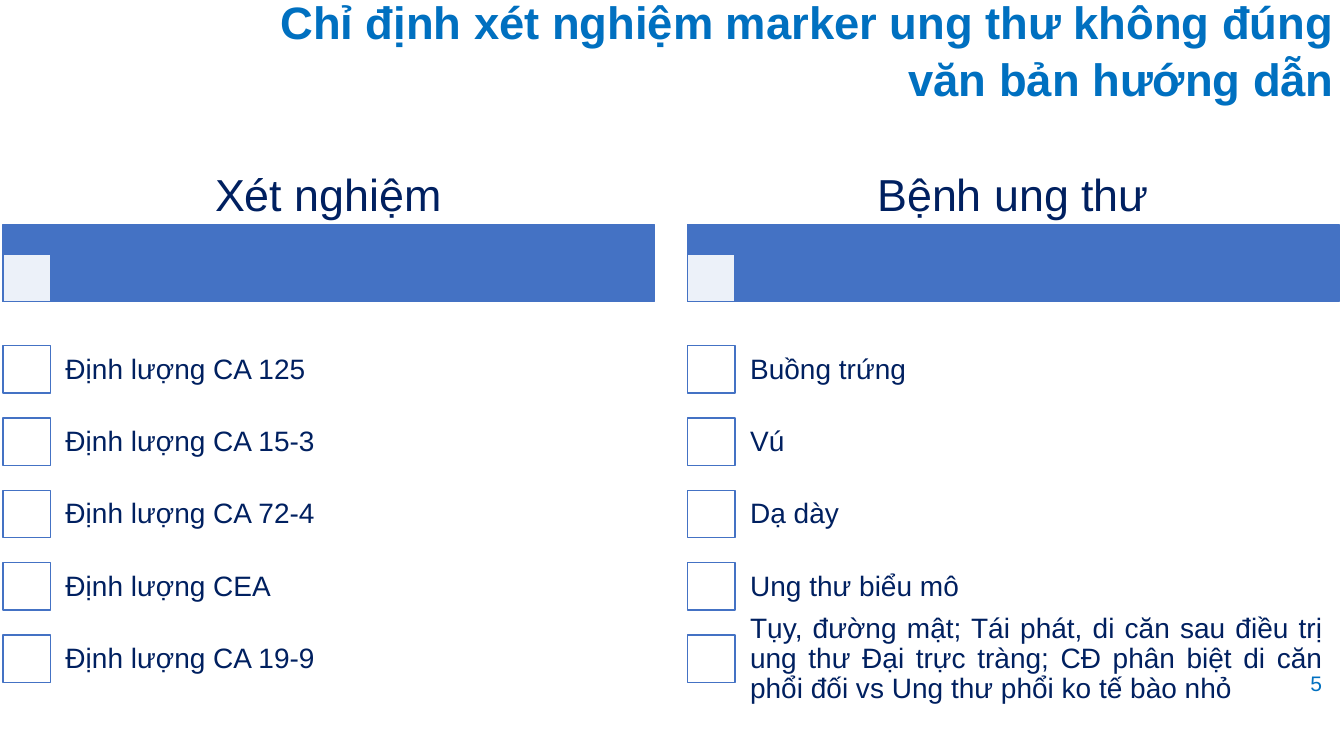
"""Builds a slide pairing cancer marker tests with the cancers they indicate."""
from lxml.etree import SubElement
from pptx import Presentation
from pptx.dml.color import RGBColor
from pptx.enum.shapes import MSO_SHAPE as Shape
from pptx.enum.text import MSO_ANCHOR as Anchor, PP_ALIGN as Align
from pptx.oxml.ns import qn
from pptx.util import Inches, Pt

BLUE, NAVY, SKY, WHITE = "4472C4", "002060", "0070C0", "FFFFFF"
COLUMN_LEFT, COLUMN_PITCH, COLUMN_WIDTH = 0.03, 6.79, 6.46
ROW_TOP, ROW_PITCH = 3.31, 2.87 / 4
BOX_SIZE, BOX_DROP, LABEL_INDENT = 0.47, 0.12, 0.46

deck = Presentation()
deck.slide_width, deck.slide_height = Inches(13.33), Inches(7.5)
page = deck.slides.add_slide(deck.slide_layouts[6])


def add_rect(left, top, width, height, fill):
    rect = page.shapes.add_shape(Shape.RECTANGLE, *map(Inches, (left, top, width, height)))
    rect.shadow.inherit = False
    rect.fill.solid()
    rect.fill.fore_color.rgb = RGBColor.from_string(fill)
    rect.line.color.rgb = RGBColor.from_string(BLUE)
    rect.line.width = Pt(1)
    return rect


def add_text(area, text, size, color, align, insets, spacing=0.9, bold=False):
    box = page.shapes.add_textbox(*map(Inches, area))
    frame = box.text_frame
    frame.word_wrap = True
    frame.vertical_anchor = Anchor.MIDDLE
    for side, inset in zip(("left", "top", "right", "bottom"), insets):
        setattr(frame, f"margin_{side}", Inches(inset))
    para = frame.paragraphs[0]
    para.alignment, para.line_spacing = align, spacing
    span = para.add_run()
    span.text = text
    for name, value in {"name": "Arial", "size": Pt(size), "bold": bold}.items():
        setattr(span.font, name, value)
    span.font.color.rgb = RGBColor.from_string(color)


add_text((12.78, 6.58, 0.55, 0.39), "5", 15, SKY, Align.CENTER, (0.1, 0.05, 0.1, 0.05), 1)
add_text((2.66, -0.1, 10.67, 1.17),
         "Chỉ định xét nghiệm marker ung thư không đúng văn bản hướng dẫn",
         32.4, SKY, Align.RIGHT, (0.1, 0.05, 0.1, 0.05), 1.05, True)

columns = {
    "Xét nghiệm": ["Định lượng CA 125", "Định lượng CA 15-3", "Định lượng CA 72-4",
                   "Định lượng CEA", "Định lượng CA 19-9"],
    "Bệnh ung thư": ["Buồng trứng", "Vú", "Dạ dày", "Ung thư biểu mô",
                     "Tụy, đường mật; Tái phát, di căn sau điều trị ung thư Đại trực tràng; "
                     "CĐ phân biệt di căn phổi đối vs Ung thư phổi ko tế bào nhỏ"],
}
for column, (heading, labels) in enumerate(columns.items()):
    left = COLUMN_LEFT + column * COLUMN_PITCH
    add_rect(left, 2.23, COLUMN_WIDTH, 0.76, BLUE)
    tint = add_rect(left, 2.52, BOX_SIZE, BOX_SIZE, WHITE)
    tint_color = tint.fill._xPr.find(qn("a:solidFill"))[0]
    SubElement(tint_color, qn("a:alpha"), val="90000")
    add_text((left, 1.27, COLUMN_WIDTH, 1.37), heading, 32, NAVY, Align.CENTER,
             (0.07, 0.04, 0.07, 0.04))
    for row, label in enumerate(labels):
        top = ROW_TOP + row * ROW_PITCH
        add_rect(left, top + BOX_DROP, BOX_SIZE, BOX_SIZE, WHITE)
        add_text((left + LABEL_INDENT, top, COLUMN_WIDTH - LABEL_INDENT, 0.72), label, 20, NAVY,
                 Align.JUSTIFY if len(label) > 60 else Align.LEFT, (0.16,) * 4)

deck.save("out.pptx")
